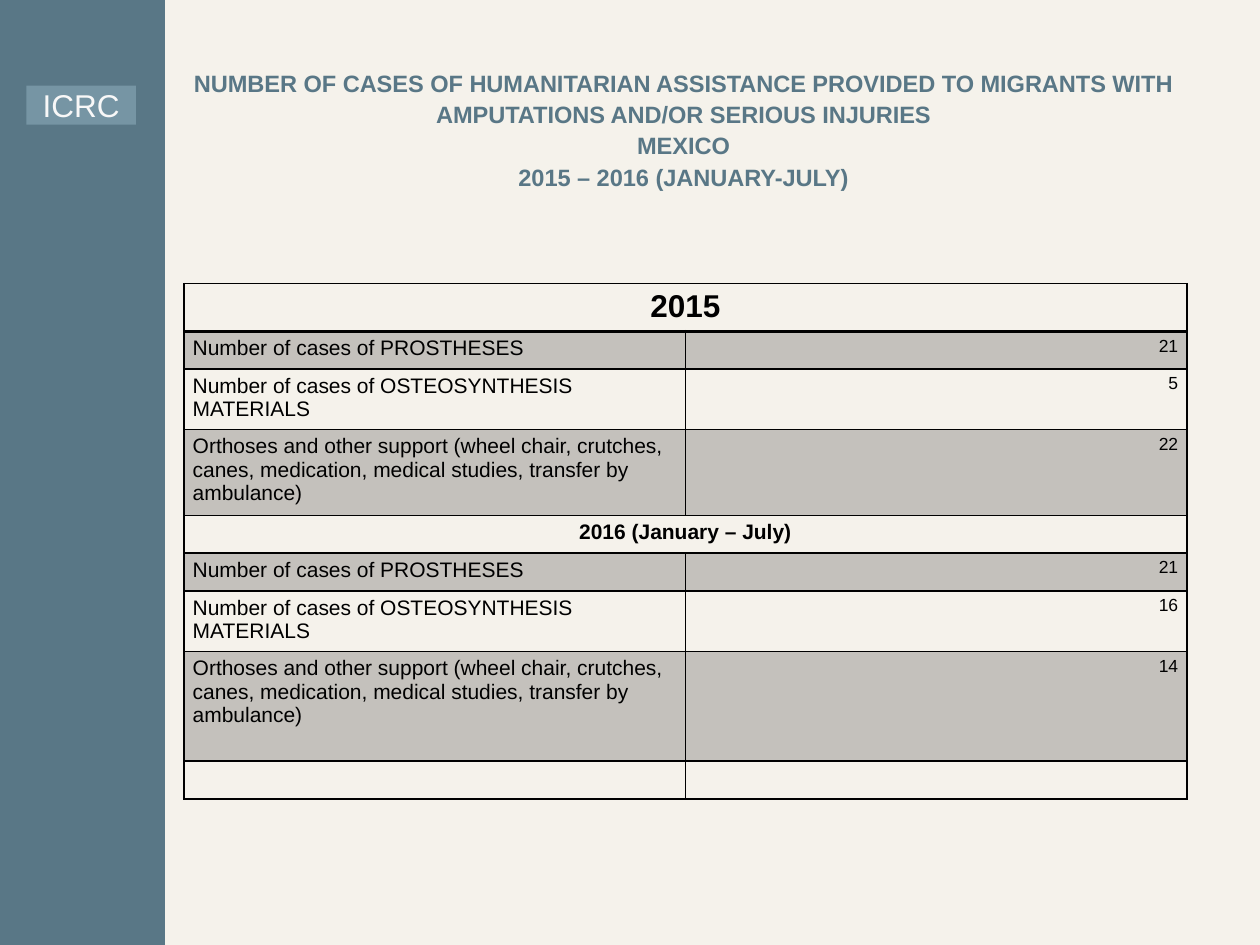
from lxml.etree import SubElement as Sub
from pptx import Presentation
from pptx.dml.color import RGBColor as Rgb
from pptx.enum.shapes import MSO_SHAPE as Shape
from pptx.enum.text import MSO_ANCHOR as Anchor, PP_ALIGN as Align
from pptx.oxml import parse_xml
from pptx.oxml.ns import nsdecls, qn
from pptx.util import Inches, Pt

HUES = {"page": "F5F2EB", "band": "597786", "tag": "7695A4",
        "pale": "F8F8F8", "ink": "000000"}
TITLE = ("NUMBER OF CASES OF HUMANITARIAN ASSISTANCE PROVIDED TO MIGRANTS "
         "WITH AMPUTATIONS AND/OR SERIOUS INJURIES\vMEXICO\v"
         "2015 – 2016 (JANUARY-JULY)")
KINDS = ["Number of cases of PROSTHESES",
         "Number of cases of OSTEOSYNTHESIS MATERIALS",
         "Orthoses and other support (wheel chair, crutches, canes, "
         "medication, medical studies, transfer by ambulance)"]
YEARS = [("2015", 18, (21, 5, 22)),
         ("2016 (January – July)", 12, (21, 16, 14))]
HEIGHTS = [0.38, 0.3, 0.45, 0.68, 0.3, 0.3, 0.45, 0.87, 0.3]


def color(name):
    """Return the named colour."""
    return Rgb.from_string(HUES[name])


def write(frame, text, size, hue, align=Align.LEFT, bold=False):
    """Put one styled paragraph in a text frame."""
    frame.text = text
    para = frame.paragraphs[0]
    para.alignment = align
    for run in para.runs:
        font = run.font
        font.name, font.size, font.bold = "Arial", Pt(size), bold
        font.color.rgb = color(hue)
    if not text:
        Sub(para._p, qn("a:endParaRPr"), sz=str(size * 100))
    return para


def add_block(slide, box, hue):
    """Add a plain filled rectangle."""
    block = slide.shapes.add_shape(Shape.RECTANGLE, *map(Inches, box))
    block.shadow.inherit = False
    block.fill.solid()
    block.fill.fore_color.rgb = color(hue)
    block.line.fill.background()
    return block


def add_tag(slide, box):
    """Add the label on the side band."""
    frame = add_block(slide, box, "tag").text_frame
    frame.vertical_anchor = Anchor.MIDDLE
    write(frame, "ICRC", 18, "pale", Align.CENTER)


def add_title(slide, box):
    """Add the centred heading."""
    frame = slide.shapes.add_textbox(*map(Inches, box)).text_frame
    frame.word_wrap = True
    frame.vertical_anchor = Anchor.MIDDLE
    para = write(frame, TITLE, 13.5, "band", Align.CENTER, True)
    para.line_spacing = 1.1


def frame_cell(cell, shade=False, base=1):
    """Set a cell's insets, fill and borders."""
    cell.margin_left = cell.margin_right = Inches(0.07)
    cell.margin_top = cell.margin_bottom = Inches(0.04)
    props = cell._tc.get_or_add_tcPr()
    if shade:
        cell.fill.solid()
        cell.fill.fore_color.rgb = color("ink")
        Sub(props.find(".//" + qn("a:srgbClr")), qn("a:alpha"), val="20000")
    else:
        cell.fill.background()
    for spot, (side, width) in enumerate(zip("LRTB", (1, 1, 1, base))):
        props.insert(spot, parse_xml(
            f'<a:ln{side} {nsdecls("a")} w="{Pt(width)}"><a:solidFill>'
            f'<a:srgbClr val="{HUES["ink"]}"/></a:solidFill></a:ln{side}>'))


def add_cases(slide, box):
    """Add the table of cases by year."""
    shape = slide.shapes.add_table(len(HEIGHTS), 2, *map(Inches, box))
    table = shape.table
    table.first_row = table.horz_banding = False
    for row, height in zip(table.rows, HEIGHTS):
        row.height = Inches(height)
    for part, (year, size, counts) in enumerate(YEARS):
        top = part * (len(KINDS) + 1)
        head, tail = table.rows[top].cells
        head.merge(tail)
        write(head.text_frame, year, size, "ink", Align.CENTER, True)
        for cell in (head, tail):
            frame_cell(cell, base=1 if part else 2)
        for step, (kind, count) in enumerate(zip(KINDS, counts)):
            label, value = table.rows[top + 1 + step].cells
            write(label.text_frame, kind, 12, "ink")
            write(value.text_frame, str(count), 10, "ink", Align.RIGHT)
            for cell in (label, value):
                frame_cell(cell, shade=step % 2 == 0)
            if top + step == 0:
                for cell in (label, value):
                    cell._tc.tcPr.find(qn("a:lnT")).set("w", str(Pt(2)))
    for cell in table.rows[len(HEIGHTS) - 1].cells:
        write(cell.text_frame, "", 12, "ink")
        frame_cell(cell)


def main():
    """Build and save the slide."""
    deck = Presentation()
    deck.slide_width, deck.slide_height = Inches(10), Inches(7.5)
    slide = deck.slides.add_slide(deck.slide_layouts[6])
    slide.background.fill.solid()
    slide.background.fill.fore_color.rgb = color("page")
    add_block(slide, (0, 0, 1.31, 7.5), "band")
    add_title(slide, (1.44, 0.84, 7.97, 0.36))
    add_cases(slide, (1.46, 2.25, 7.96, sum(HEIGHTS)))
    add_tag(slide, (0.21, 0.68, 0.87, 0.31))
    deck.save("out.pptx")


if __name__ == "__main__":
    main()
